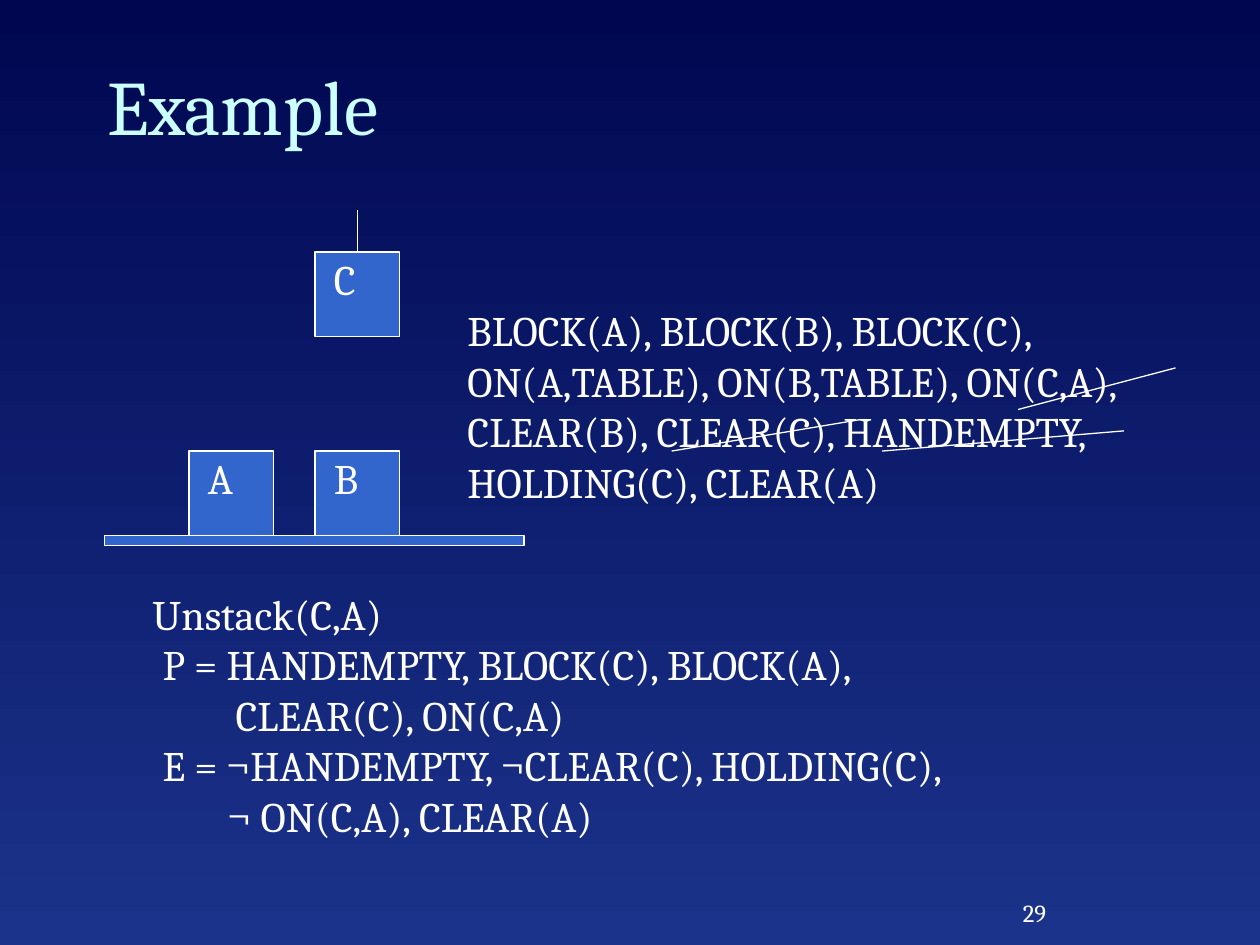
"""Build the blocks-world example slide."""
from lxml import etree
from pptx import Presentation
from pptx.dml import color as dml
from pptx.enum import shapes, text
from pptx.oxml import ns
from pptx.util import Inches, Pt

HUES = {"top": "000751", "base": "1B338A", "title": "CCFFFF",
        "text": "FFFFFF", "line": "FFFFFF", "block": "3366CC"}
FONT = "Cambria"
SIDE = 0.67
BLOCKS = [("A", 1.5, 3.58), ("B", 2.5, 3.58), ("C", 2.5, 2)]
FACTS = [
    (["BLOCK(A), BLOCK(B), BLOCK(C),"], 0.04, 0),
    (["ON(A,TABLE), ON(B,TABLE), ON(C,A), ",
      "CLEAR(B), CLEAR(C), HANDEMPTY,"], 0.04, 0),
    (["HOLDING(C), CLEAR(A)"], 0.04, 0),
]
RULES = [
    (["Unstack(C,A)"], 0.04, 0),
    (["P = HANDEMPTY, BLOCK(C), BLOCK(A), ", "CLEAR(C), ON(C,A)"], 0.7, -0.58),
    (["E = ¬HANDEMPTY, ¬CLEAR(C), HOLDING(C),", "¬ ON(C,A), CLEAR(A)"],
     0.64, -0.52),
]
STRIKES = [(7, 3.58, 8.92, 3.42), (5.33, 3.58, 6.83, 3.33),
           (8.08, 3.25, 9.33, 2.92)]


def tint(name):
    return dml.RGBColor.from_string(HUES[name])


def add_text(slide, area, paras, size=24, hue="text", pads=(0, 0, 0.04, 0),
             wrap=False, fit=True, align=text.PP_ALIGN.LEFT,
             anchor=text.MSO_ANCHOR.TOP):
    frame = slide.shapes.add_textbox(*map(Inches, area)).text_frame
    frame.word_wrap = wrap
    frame.auto_size = (text.MSO_AUTO_SIZE.SHAPE_TO_FIT_TEXT if fit
                       else text.MSO_AUTO_SIZE.NONE)
    frame.vertical_anchor = anchor
    (frame.margin_left, frame.margin_top,
     frame.margin_right, frame.margin_bottom) = map(Inches, pads)
    for i, (lines, left, first) in enumerate(paras):
        para = frame.add_paragraph() if i else frame.paragraphs[0]
        para.alignment = align
        props = para._p.get_or_add_pPr()
        props.set("marL", str(Inches(left)))
        props.set("indent", str(Inches(first)))
        for j, line in enumerate(lines):
            if j:
                para.add_line_break()
            run = para.add_run()
            run.text = line
            run.font.name = FONT
            run.font.size = Pt(size)
            run.font.color.rgb = tint(hue)


def add_rect(slide, *area):
    rect = slide.shapes.add_shape(shapes.MSO_SHAPE.RECTANGLE,
                                  *map(Inches, area))
    rect.shadow.inherit = False
    rect.fill.solid()
    rect.fill.fore_color.rgb = tint("block")
    rect.line.color.rgb = tint("line")
    rect.line.width = Pt(0.75)
    return rect


def add_block(slide, name, left, top):
    rect = add_rect(slide, left, top, SIDE, SIDE)
    add_text(slide, (left + 0.11, top + 0.01, 0.4, 0.51), [([name], 0.04, 0)])
    return rect


def add_line(slide, *ends):
    line = slide.shapes.add_connector(shapes.MSO_CONNECTOR.STRAIGHT,
                                      *map(Inches, ends))
    line.line.color.rgb = tint("line")
    line.line.width = Pt(0.75)
    etree.SubElement(line._element.spPr, ns.qn("a:effectLst"))
    return line


def add_hand(slide, block, left, top):
    right, mid = left + SIDE, left + SIDE / 2
    add_line(slide, left, top, right, top)
    for side in (left, right):
        add_line(slide, side, top, side, top + 0.33)
    add_line(slide, mid, top - 0.33, mid, top).end_connect(block, 0)


def set_back(slide):
    fill = slide.background.fill
    fill.gradient()
    fill.gradient_angle = 270
    for stop, name, place in zip(fill.gradient_stops, ("top", "base"), (0, 1)):
        stop.color.rgb = tint(name)
        stop.position = place


def main():
    deck = Presentation()
    deck.slide_width, deck.slide_height = Inches(10), Inches(7.5)
    slide = deck.slides.add_slide(deck.slide_layouts[6])
    set_back(slide)
    add_text(slide, (8.05, 7.08, 0.32, 0.38), [(["29"], 0, 0)], size=14,
             pads=(0.05, 0.05, 0.05, 0.05), fit=False,
             align=text.PP_ALIGN.CENTER)
    add_text(slide, (0.75, 0.25, 8.5, 1.17), [(["Example"], 0.04, 0)],
             size=44, hue="title", pads=(0.06, 0.06, 0.14, 0.06), wrap=True,
             fit=False, anchor=text.MSO_ANCHOR.MIDDLE)
    add_rect(slide, 0.83, 4.25, 3.33, 0.08)
    rects = {name: add_block(slide, name, left, top)
             for name, left, top in BLOCKS}
    add_hand(slide, rects["C"], 2.5, 2)
    add_text(slide, (3.67, 2.42, 6.15, 1.72), FACTS)
    add_text(slide, (1.17, 4.67, 7.25, 2.12), RULES)
    for ends in STRIKES:
        add_line(slide, *ends)
    deck.save("out.pptx")


if __name__ == "__main__":
    main()
